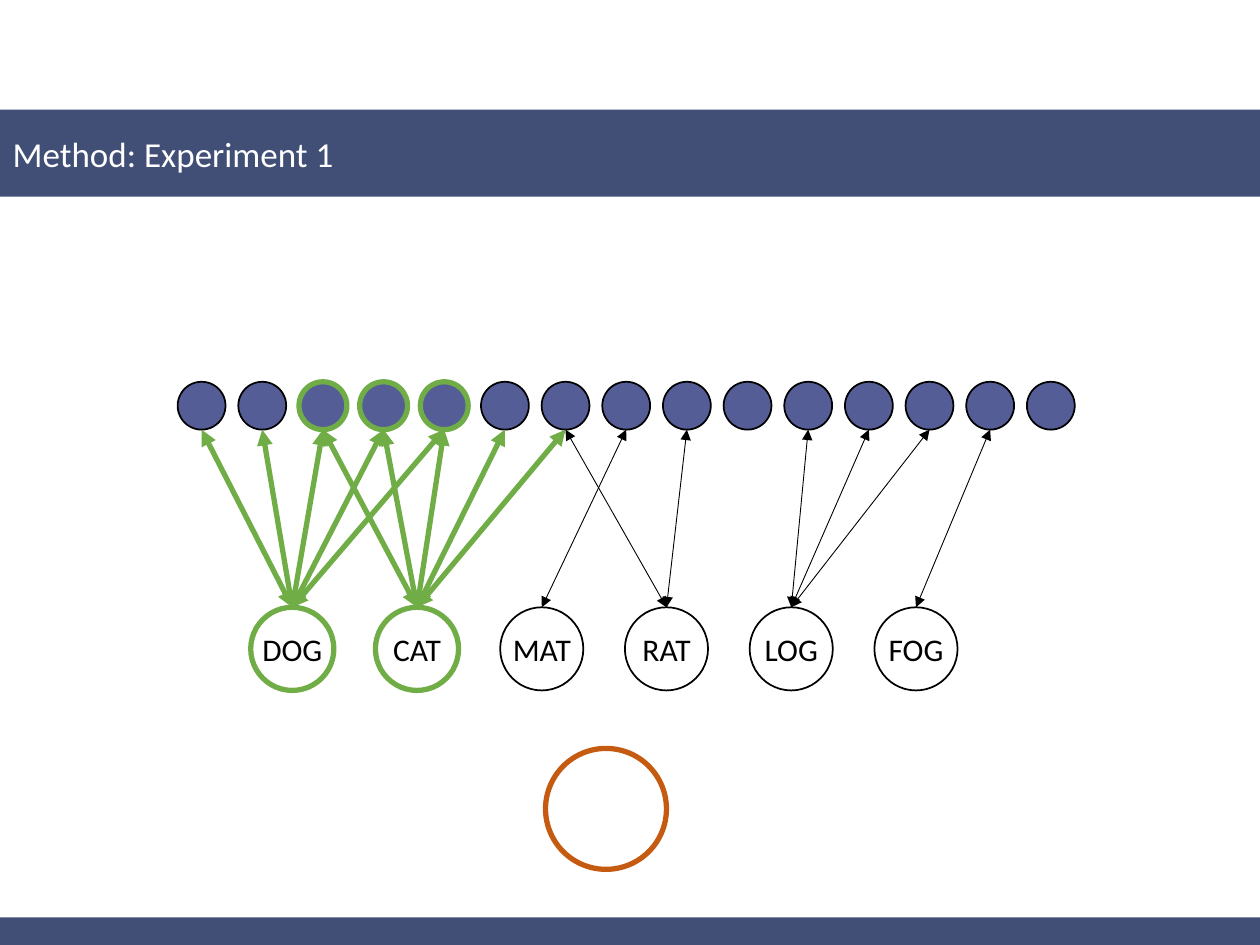
from dataclasses import dataclass

import pptx
import pptx.dml.color
import pptx.enum.shapes
import pptx.enum.text
import pptx.oxml
import pptx.oxml.ns
import pptx.util

Inches, Pt = pptx.util.Inches, pptx.util.Pt
SHAPE = pptx.enum.shapes.MSO_SHAPE
ALIGN = pptx.enum.text.PP_ALIGN

NAVY, BLUE, WHITE, BLACK = "414F77", "545D96", "FFFFFF", "000000"
GREEN, ORANGE = "70AD47", "C55A11"
WIDTH, HEIGHT = 10, 7.5


@dataclass
class Row:
    """Equal circles on one line, spaced by a fixed pitch."""
    left: float
    top: float
    size: float
    pitch: float

    def x(self, column: int) -> float:
        return self.left + column * self.pitch

    def centre(self, column: int) -> float:
        return self.x(column) + self.size / 2

    @property
    def bottom(self) -> float:
        return self.top + self.size


@dataclass
class Word:
    text: str
    features: tuple[int, ...]
    active: bool = False


FEATURE_COUNT = 15
FEATURE_ROW = Row(1.41, 3.03, 0.38, (8.15 - 1.41) / (FEATURE_COUNT - 1))
WORD_ROW = Row(1.99, 4.82, 0.66, 0.99)
LABEL_WIDTH = 0.72
SHARED_FEATURES = (2, 3, 4)
WORDS = [
    Word("DOG", (0, 1, 2, 3, 4), active=True),
    Word("CAT", (2, 3, 4, 5, 6), active=True),
    Word("MAT", (7,)),
    Word("RAT", (6, 8)),
    Word("LOG", (10, 11, 12)),
    Word("FOG", (13,)),
]


def colour(value: str) -> pptx.dml.color.RGBColor:
    return pptx.dml.color.RGBColor.from_string(value)


def set_fill(shape, value: str) -> None:
    shape.fill.solid()
    shape.fill.fore_color.rgb = colour(value)


def add_span(para, text: str, size: float, value: str) -> None:
    span = para.add_run()
    span.text = text
    span.font.name = "Calibri"
    span.font.size = Pt(size)
    span.font.color.rgb = colour(value)


def add_circle(shapes, left: float, top: float, size: float,
               fill: str | None, line: str, weight: float) -> None:
    circle = shapes.add_shape(SHAPE.OVAL, Inches(left), Inches(top),
                              Inches(size), Inches(size))
    circle.shadow.inherit = False
    if fill:
        set_fill(circle, fill)
    else:
        circle.fill.background()
    circle.line.color.rgb = colour(line)
    circle.line.width = Pt(weight)


def add_word(page, column: int, word: Word) -> None:
    group = page.shapes.add_group_shape()
    add_circle(group.shapes, WORD_ROW.x(column), WORD_ROW.top, WORD_ROW.size, WHITE,
               *((GREEN, 3) if word.active else (BLACK, 1)))
    box = group.shapes.add_textbox(Inches(WORD_ROW.centre(column) - LABEL_WIDTH / 2),
                                   Inches(WORD_ROW.top + 0.13),
                                   Inches(LABEL_WIDTH), Inches(0.4))
    box.text_frame.word_wrap = False
    box.text_frame.auto_size = pptx.enum.text.MSO_AUTO_SIZE.SHAPE_TO_FIT_TEXT
    para = box.text_frame.paragraphs[0]
    para.alignment = ALIGN.CENTER
    add_span(para, word.text, 18, BLACK)


def add_link(page, column: int, feature: int, active: bool) -> None:
    link = page.shapes.add_connector(
        pptx.enum.shapes.MSO_CONNECTOR.STRAIGHT,
        Inches(WORD_ROW.centre(column)), Inches(WORD_ROW.top),
        Inches(FEATURE_ROW.centre(feature)), Inches(FEATURE_ROW.bottom))
    link.line.color.rgb = colour(GREEN if active else BLACK)
    link.line.width = Pt(3 if active else 0.5)
    qn = pptx.oxml.ns.qn
    properties = link._element.spPr
    line = properties.find(qn("a:ln"))
    for end in ("a:headEnd", "a:tailEnd"):
        line.append(line.makeelement(qn(end), {"type": "triangle"}))
    properties.append(properties.makeelement(qn("a:effectLst"), {}))


def main() -> None:
    deck = pptx.Presentation()
    deck.slide_width, deck.slide_height = Inches(WIDTH), Inches(HEIGHT)
    page = deck.slides.add_slide(deck.slide_layouts[5])

    # Title band
    title = page.shapes.title
    title.left, title.top = Inches(0), Inches(0.87)
    title.width, title.height = Inches(WIDTH), Inches(0.69)
    set_fill(title, NAVY)
    title.text_frame.auto_size = pptx.enum.text.MSO_AUTO_SIZE.NONE
    title.text_frame.vertical_anchor = pptx.enum.text.MSO_ANCHOR.MIDDLE
    para = title.text_frame.paragraphs[0]
    para.alignment = ALIGN.LEFT
    add_span(para, "Method: Experiment 1", 20, WHITE)

    # Footer band
    footer = page.shapes.add_shape(SHAPE.RECTANGLE, Inches(0), Inches(HEIGHT - 0.22),
                                   Inches(WIDTH), Inches(0.22))
    footer.shadow.inherit = False
    set_fill(footer, NAVY)
    footer.line.fill.background()

    # Words and features
    for column, word in enumerate(WORDS):
        add_word(page, column, word)
    for feature in range(FEATURE_COUNT):
        add_circle(page.shapes, FEATURE_ROW.x(feature), FEATURE_ROW.top, FEATURE_ROW.size,
                   BLUE, *((GREEN, 3) if feature in SHARED_FEATURES else (BLACK, 1)))

    # Links between each word and its features
    for column, word in enumerate(WORDS):
        for feature in word.features:
            add_link(page, column, feature, word.active)

    # Empty response circle
    add_circle(page.shapes, 4.33, 5.94, 0.96, None, ORANGE, 3)

    deck.save("out.pptx")


if __name__ == "__main__":
    main()
